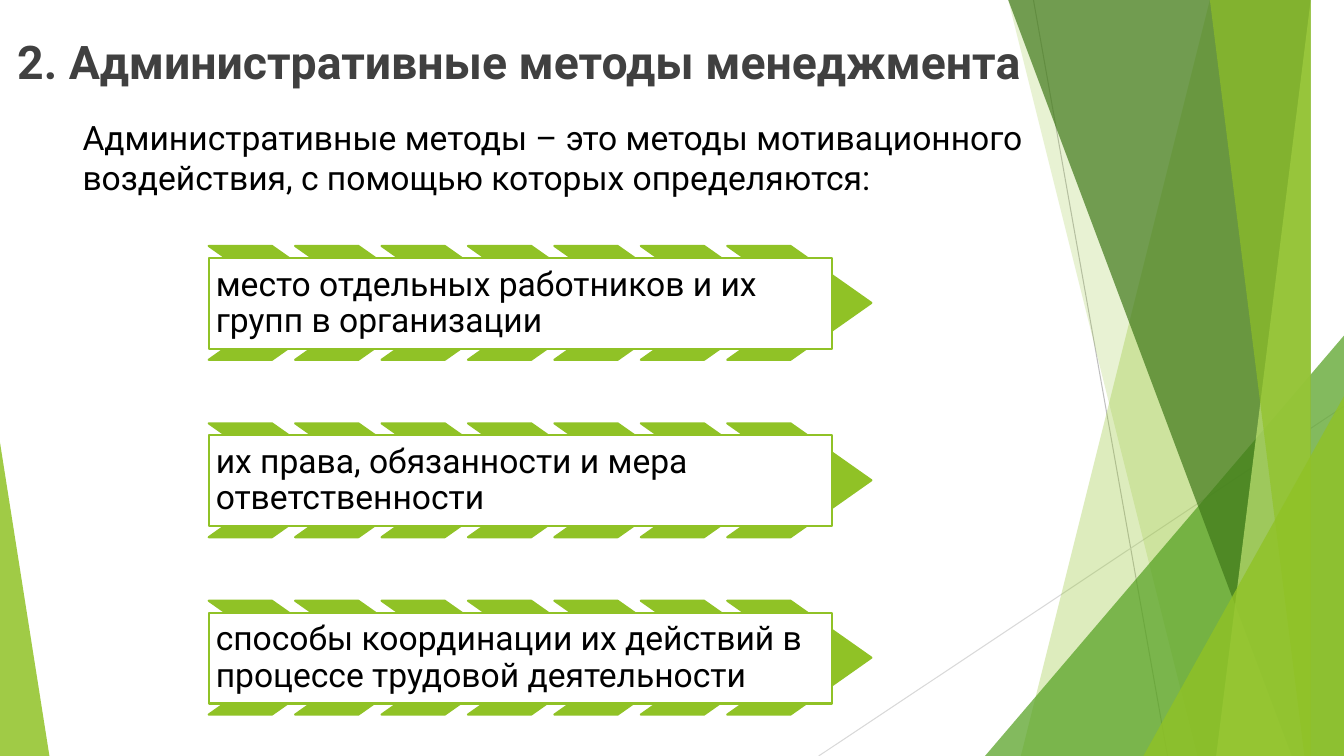
"""Build a slide on administrative management methods with three arrow rows."""
from lxml import etree
from pptx import Presentation
from pptx.dml.color import RGBColor
from pptx.enum.shapes import MSO_CONNECTOR, MSO_SHAPE
from pptx.enum.text import MSO_ANCHOR, MSO_AUTO_SIZE, PP_ALIGN
from pptx.oxml.ns import qn
from pptx.util import Inches, Pt

LINE = MSO_CONNECTOR.STRAIGHT
TRI, CHEVRON, RECT = MSO_SHAPE.ISOSCELES_TRIANGLE, MSO_SHAPE.CHEVRON, MSO_SHAPE.RECTANGLE
MIDDLE, TOP = MSO_ANCHOR.MIDDLE, MSO_ANCHOR.TOP
LEFT, CENTER = PP_ALIGN.LEFT, PP_ALIGN.CENTER
GREEN = "90C226"
W, H = 13.33, 7.5

prs = Presentation()
prs.slide_width, prs.slide_height = Inches(W), Inches(H)
slide = prs.slides.add_slide(prs.slide_layouts[5])
shapes = slide.shapes


def paint(shape, fill, alpha=100, line=None):
    """Set the fill, opacity and outline of a shape."""
    shape.shadow.inherit = False
    shape.fill.solid()
    shape.fill.fore_color.rgb = RGBColor.from_string(fill)
    if alpha < 100:
        tint = shape.fill._xPr.find(qn("a:solidFill"))[0]
        etree.SubElement(tint, qn("a:alpha"), val=str(alpha * 1000))
    if line:
        shape.line.color.rgb = RGBColor.from_string(line)
        shape.line.width = Pt(1.5)
    else:
        shape.line.fill.background()


def write(shape, text, inset=0.1, anchor=MIDDLE, size=24, color="000000", bold=False, **form):
    """Put one formatted paragraph into a shape."""
    frame = shape.text_frame
    frame.text = text
    frame.word_wrap = True
    frame.auto_size = MSO_AUTO_SIZE.NONE
    frame.vertical_anchor = anchor
    frame.margin_left = frame.margin_right = Inches(inset)
    frame.margin_top = frame.margin_bottom = Inches(min(inset, 0.05))
    para = frame.paragraphs[0]
    for key, value in form.items():
        setattr(para, key, value)
    font = para.runs[0].font
    for key, value in {"name": "Roboto", "size": Pt(size), "bold": bold}.items():
        setattr(font, key, value)
    font.color.rgb = RGBColor.from_string(color)


for x1, y1, x2, y2, tone in [(10.25, 0, 11.58, H, "BFBFBF"), (W, 4.03, 8.12, H, "D9D9D9")]:
    rule = shapes.add_connector(LINE, Inches(x1), Inches(y1), Inches(x2), Inches(y2))
    rule.line.color.rgb = RGBColor.from_string(tone)
    rule.line.width = Pt(0.75)
    etree.SubElement(rule._element.spPr, qn("a:effectLst"))

facets = [
    ("band", (12.28, 10.04), GREEN, 30),
    ("band", (10.5, 11.83), GREEN, 20),
    ("peak", (9.77, 3.33, 3.56, 1), "54A021", 72),
    ("band", (10.21, 12.91), "3F7819", 70),
    ("band", (13.03, 11.92), "C0E474", 70),
    ("band", (11.96, 13.18), GREEN, 65),
    ("peak", (11.34, 3.93, 1.99, 1), GREEN, 80),
    ("peak", (0, 4.39, 0.49, 0), GREEN, 85),
]
for kind, geom, tone, alpha in facets:
    if kind == "band":
        head, foot = geom
        pen = shapes.build_freeform(head, 0, scale=Inches(1))
        pen.add_line_segments([(W, 0), (W, H), (foot, H)], close=True)
        facet = pen.convert_to_shape()
    else:
        x, y, wide, tip = geom
        facet = shapes.add_shape(TRI, Inches(x), Inches(y), Inches(wide), Inches(H - y))
        facet.adjustments[0] = tip
    paint(facet, tone, alpha)

title = shapes.title
title.left, title.top, title.width, title.height = [Inches(n) for n in (0, 0.3, 10.3, 0.61)]
write(title, "2. Административные методы менеджмента", size=33.1, color="404040",
      bold=True, alignment=CENTER, space_before=Pt(10))

intro = shapes.add_textbox(Inches(0.72), Inches(1.11), Inches(9.95), Inches(0.91))
write(intro, "Административные методы – это методы мотивационного воздействия, "
      "с помощью которых определяются:", anchor=TOP)

items = [
    "место отдельных работников и их групп в организации",
    "их права, обязанности и мера ответственности",
    "способы координации их действий в процессе трудовой деятельности",
]
left, top, pitch, step = 2.07, 2.44, 1.76, 6 / 7
for row, item in enumerate(items):
    y = top + row * pitch
    for col in range(7):
        arrow = shapes.add_shape(CHEVRON, Inches(left + col * step), Inches(y),
                                 Inches(1.43), Inches(1.13))
        arrow.adjustments[0] = 0.71
        paint(arrow, GREEN, line=GREEN)
    card = shapes.add_shape(RECT, Inches(left), Inches(y + 0.12), Inches(6.18), Inches(0.9))
    paint(card, "FFFFFF", line=GREEN)
    write(card, item, inset=0.07, alignment=LEFT, line_spacing=0.9)

prs.save("out.pptx")
